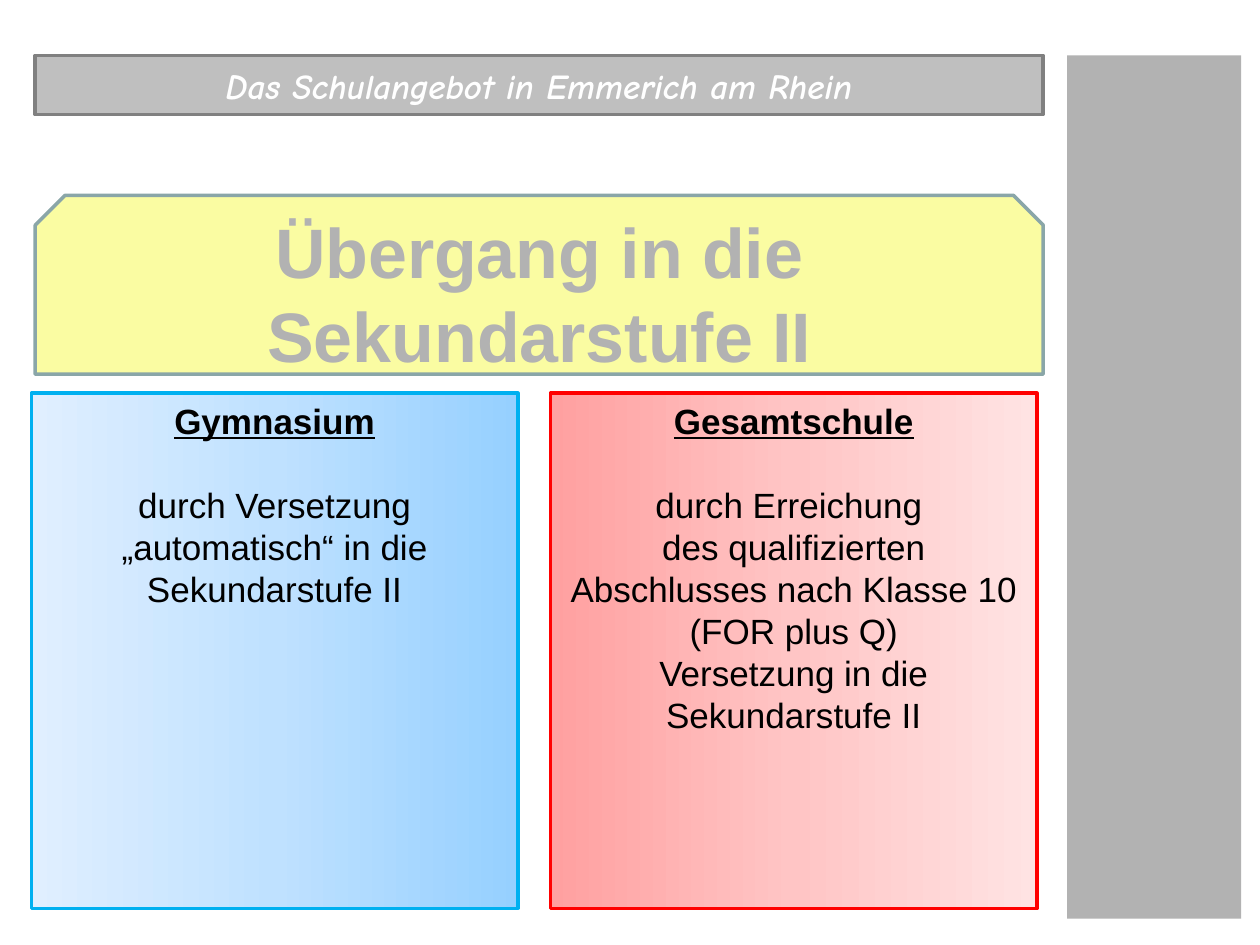
"""Builds the slide on moving up to Sekundarstufe II."""
from copy import deepcopy
from dataclasses import dataclass

from pptx import Presentation
from pptx import util as u
from pptx.dml.color import RGBColor
from pptx.enum import shapes, text


@dataclass(frozen=True)
class Theme:
    body_font: str = "Arial"
    banner_font: str = "Comic Neue"
    title_size: int = 40
    body_size: int = 20
    leading: float = 1.2
    line_width: int = 2
    white: str = "FFFFFF"
    black: str = "000000"
    grey: str = "B2B2B2"
    banner_fill: str = "BFBFBF"
    banner_line: str = "808080"
    title_fill: str = "FAFCA2"
    title_line: str = "8AA6A8"
    blue_line: str = "00B0F0"
    red_line: str = "FF0000"
    blues: tuple = ("96D0FF", "BFE1FF", "E0EFFF")
    reds: tuple = ("FFA0A0", "FFC5C5", "FFE3E3")


def write(paragraph, wording, *, font, size, color, bold=False, italic=False,
          underline=False, leading=None, before=0):
    paragraph.alignment = text.PP_ALIGN.CENTER
    paragraph.space_before = u.Pt(before)
    if leading:
        paragraph.line_spacing = u.Pt(size * leading)
    run = paragraph.add_run()
    run.text = wording
    run.font.name, run.font.size = font, u.Pt(size)
    run.font.bold, run.font.italic, run.font.underline = bold, italic, underline
    run.font.color.rgb = RGBColor.from_string(color)


class Board:
    def __init__(self, slide, theme):
        self.slide, self.theme = slide, theme

    def box(self, left, top, width, height, fill=None, line=None,
            preset=shapes.MSO_SHAPE.RECTANGLE):
        shape = self.slide.shapes.add_shape(
            preset, *map(u.Inches, (left, top, width, height)))
        shape.shadow.inherit = False
        if fill:
            shape.fill.solid()
            shape.fill.fore_color.rgb = RGBColor.from_string(fill)
        if line:
            shape.line.color.rgb = RGBColor.from_string(line)
            shape.line.width = u.Pt(self.theme.line_width)
        else:
            shape.line.fill.background()
        shape.text_frame.word_wrap = True
        return shape

    def heading(self, wording, box, **style):
        box.text_frame.vertical_anchor = text.MSO_ANCHOR.MIDDLE
        write(box.text_frame.paragraphs[0], wording, bold=True, **style)

    def gradient(self, shape, colors, angle):
        shape.fill.gradient()
        shape.fill.gradient_angle = angle
        stop_list = shape.fill._fill._gradFill.gsLst
        stop_list.insert(1, deepcopy(stop_list[0]))
        for index, (stop, color) in enumerate(zip(shape.fill.gradient_stops, colors)):
            stop.position = index / (len(colors) - 1)
            stop.color.rgb = RGBColor.from_string(color)

    def school(self, left, name, route, colors, angle, line):
        theme = self.theme
        card = self.box(left, 3.12, 3.86, 4.09, line=line)
        self.gradient(card, colors, angle)
        frame = card.text_frame
        frame.vertical_anchor = text.MSO_ANCHOR.TOP
        style = dict(font=theme.body_font, size=theme.body_size,
                     color=theme.black, leading=theme.leading)
        write(frame.paragraphs[0], name, bold=True, underline=True, **style)
        for index, step in enumerate(route):
            gap = 0 if index else theme.body_size * theme.leading
            write(frame.add_paragraph(), step, before=gap, **style)


def main():
    theme = Theme()
    deck = Presentation()
    deck.slide_width, deck.slide_height = u.Inches(10), u.Inches(7.5)
    board = Board(deck.slides.add_slide(deck.slide_layouts[6]), theme)

    board.box(8.47, 0.44, 1.38, 6.85, theme.grey)
    banner = board.box(0.28, 0.44, 8, 0.47, theme.banner_fill, theme.banner_line)
    board.heading("Das Schulangebot in Emmerich am Rhein", banner, italic=True,
                  font=theme.banner_font, size=theme.body_size, color=theme.white)
    title = board.box(0.28, 1.55, 8, 1.42, theme.title_fill, theme.title_line,
                      shapes.MSO_SHAPE.SNIP_2_SAME_RECTANGLE)
    board.heading("Übergang in die Sekundarstufe II", title, font=theme.body_font,
                  size=theme.title_size, color=theme.grey, leading=theme.leading)

    board.school(0.25, "Gymnasium",
                 ["durch Versetzung „automatisch“ in die Sekundarstufe II"],
                 theme.blues, 180, theme.blue_line)
    board.school(4.37, "Gesamtschule",
                 ["durch Erreichung ",
                  "des qualifizierten Abschlusses nach Klasse 10",
                  "(FOR plus Q)",
                  "Versetzung in die Sekundarstufe II"],
                 theme.reds, 0, theme.red_line)
    deck.save("out.pptx")


if __name__ == "__main__":
    main()
